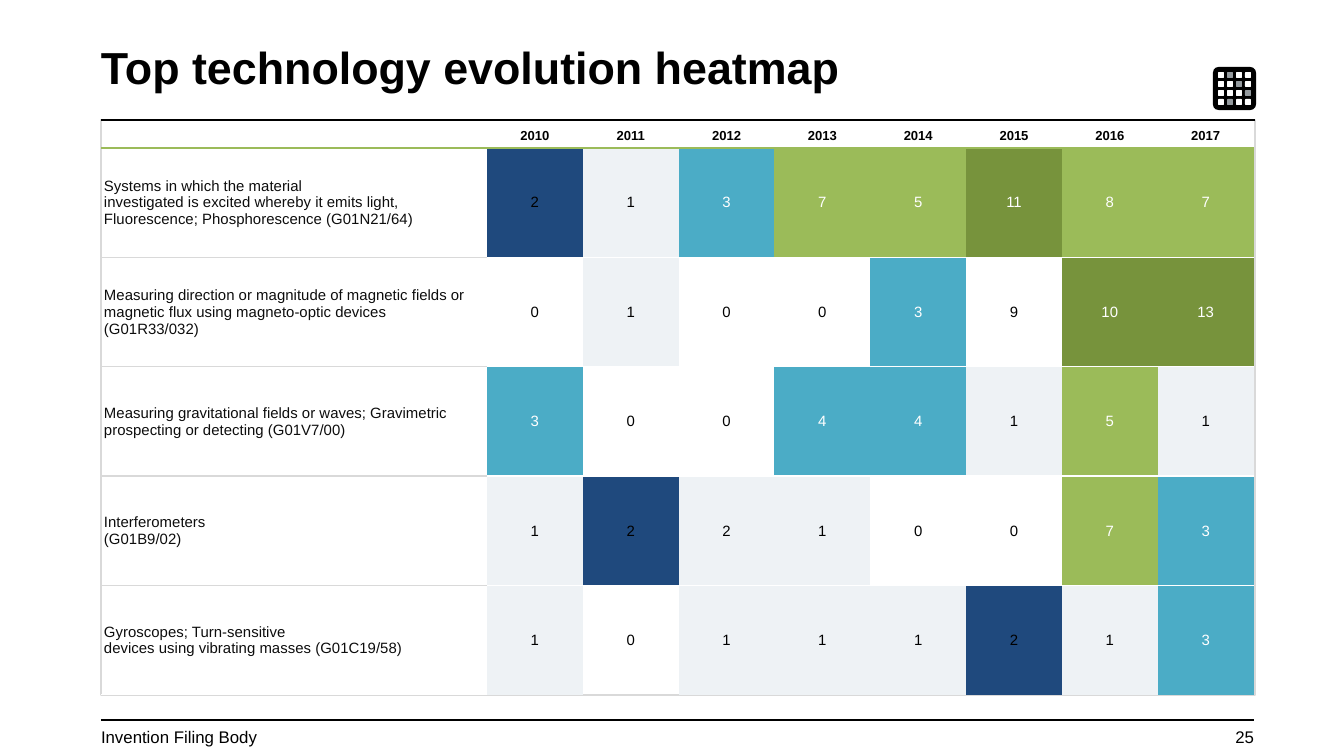
from dataclasses import dataclass

from lxml import etree
from pptx import Presentation
from pptx import util as u
from pptx.dml.color import RGBColor
from pptx.enum import shapes, text
from pptx.oxml.ns import qn

SCALE = 9144000 / 1344
LEFT, RIGHT = 101, 1254
BLACK, WHITE, GREY, GREEN = "000000", "FFFFFF", "D9D9D9", "9BBB59"
NO_GRID = "{2D5ABB26-0587-4C30-8999-92F81FD0307C}"
ALIGN = {"l": text.PP_ALIGN.LEFT, "c": text.PP_ALIGN.CENTER, "r": text.PP_ALIGN.RIGHT}


@dataclass
class Level:
    fill: str | None
    ink: str


@dataclass
class Topic:
    label: str
    counts: list[int]
    heat: str


LEVELS = {
    "-": Level(None, BLACK),
    "L": Level("EEF2F5", BLACK),
    "N": Level("1F497D", BLACK),
    "B": Level("4BACC6", WHITE),
    "G": Level(GREEN, WHITE),
    "D": Level("77933C", WHITE),
}
YEARS = range(2010, 2018)
TOPICS = [
    Topic("Systems in which the material\ninvestigated is excited whereby it emits light, "
          "Fluorescence; Phosphorescence (G01N21/64)",
          [2, 1, 3, 7, 5, 11, 8, 7], "NLBGGDGG"),
    Topic("Measuring direction or magnitude of magnetic fields or magnetic flux "
          "using magneto-optic devices\n(G01R33/032)",
          [0, 1, 0, 0, 3, 9, 10, 13], "-L--B-DD"),
    Topic("Measuring gravitational fields or waves; Gravimetric prospecting "
          "or detecting (G01V7/00)",
          [3, 0, 0, 4, 4, 1, 5, 1], "B--BBLGL"),
    Topic("Interferometers\n(G01B9/02)",
          [1, 2, 2, 1, 0, 0, 7, 3], "LNLL--GB"),
    Topic("Gyroscopes; Turn-sensitive\ndevices using vibrating masses (G01C19/58)",
          [1, 0, 1, 1, 1, 2, 1, 3], "L-LLLNLB"),
]
ICON = [".#..", "..#.", "...#", ".#.."]


def px(n: int) -> int:
    return round(n * SCALE)


def hue(code: str) -> RGBColor:
    return RGBColor.from_string(code)


def write(frame, words: str, size=8, color=BLACK, bold=False, align="l") -> None:
    frame.word_wrap = True
    for i, line in enumerate(words.split("\n")):
        para = frame.paragraphs[0] if i == 0 else frame.add_paragraph()
        para.alignment = ALIGN[align]
        if not line:
            etree.SubElement(para._p, qn("a:endParaRPr"), sz=str(size * 100))
            continue
        run = para.add_run()
        run.text = line
        font = run.font
        font.name, font.size, font.bold = "Arial", u.Pt(size), bold
        font.color.rgb = hue(color)


def label(slide, words: str, x: int, y: int, w: int, h: int, mid=False, **style) -> None:
    frame = slide.shapes.add_textbox(px(x), px(y), px(w), px(h)).text_frame
    frame.margin_left = frame.margin_right = frame.margin_top = frame.margin_bottom = 0
    frame.vertical_anchor = text.MSO_ANCHOR.MIDDLE if mid else text.MSO_ANCHOR.TOP
    write(frame, words, **style)


def rule(slide, y: int, end: int, width: float) -> None:
    line = slide.shapes.add_connector(
        shapes.MSO_CONNECTOR.STRAIGHT, px(LEFT), px(y), px(end), px(y))
    line.line.color.rgb = hue(BLACK)
    line.line.width = u.Pt(width)
    etree.SubElement(line._element.spPr, qn("a:effectLst"))


def block(slide, x: int, y: int, w: int, h: int, fill=None, edge=None, curve=0.0) -> None:
    kind = shapes.MSO_SHAPE.ROUNDED_RECTANGLE if curve else shapes.MSO_SHAPE.RECTANGLE
    box = slide.shapes.add_shape(kind, px(x), px(y), px(w), px(h))
    box.shadow.inherit = False
    if curve:
        box.adjustments[0] = curve
    if fill:
        box.fill.solid()
        box.fill.fore_color.rgb = hue(fill)
    else:
        box.fill.background()
    if edge:
        box.line.color.rgb = hue(edge)
        box.line.width = u.Pt(0.75)
    else:
        box.line.fill.background()


def icon(slide) -> None:
    block(slide, 1213, 67, 43, 43, fill=BLACK, curve=0.13)
    for r, row in enumerate(ICON):
        for c, mark in enumerate(row):
            tone = "949A9E" if mark == "#" else WHITE
            block(slide, 1218 + 9 * c, 72 + 9 * r, 6, 6, fill=tone, curve=0.17)


def border(cell, side: str, color: str | None, width=0.75) -> None:
    line = etree.SubElement(cell._tc.get_or_add_tcPr(), qn(f"a:{side}"), w=str(u.Pt(width)))
    if color:
        solid = etree.SubElement(line, qn("a:solidFill"))
        etree.SubElement(solid, qn("a:srgbClr"), val=color)
    else:
        etree.SubElement(line, qn("a:noFill"))


def fill_cell(cell, words: str, top, bottom, fill=None, head=False, **style) -> None:
    cell.margin_left = cell.margin_right = px(3)
    cell.margin_top = 0
    cell.margin_bottom = px(3) if head else 0
    cell.vertical_anchor = text.MSO_ANCHOR.TOP if head else text.MSO_ANCHOR.MIDDLE
    write(cell.text_frame, words, **style)
    border(cell, "lnT", *top)
    border(cell, "lnB", *bottom)
    if fill:
        cell.fill.solid()
        cell.fill.fore_color.rgb = hue(fill)
    else:
        cell.fill.background()


def heatmap(slide) -> None:
    first, head, body = 386, 19, 547
    count = len(TOPICS)
    grid = slide.shapes.add_table(
        count + 1, len(YEARS) + 1, px(LEFT), px(129), px(RIGHT - LEFT), px(head + body)).table
    grid._tbl.tblPr.find(qn("a:tableStyleId")).text = NO_GRID
    grid.first_row = grid.horz_banding = False
    for i, col in enumerate(grid.columns):
        col.width = px(RIGHT - LEFT - first) // len(YEARS) if i else px(first)
    for i, row in enumerate(grid.rows):
        row.height = px(body) // count if i else px(head)

    green = (GREEN, 1)
    for c, name in enumerate(["", *YEARS]):
        fill_cell(grid.cell(0, c), str(name), (None,), green,
                  head=True, size=7, bold=True, align="c")
    for r, topic in enumerate(TOPICS, 1):
        last = r == count
        fill_cell(grid.cell(r, 0), topic.label, green if r == 1 else (GREY,),
                  (WHITE, 0.5) if last else (GREY,), color="0D0D0D")
        for c, (num, key) in enumerate(zip(topic.counts, topic.heat), 1):
            level = LEVELS[key]
            fill_cell(grid.cell(r, c), str(num), green if r == 1 else (WHITE,),
                      (None,) if last else (WHITE,), fill=level.fill,
                      color=level.ink, align="c")


def main() -> None:
    deck = Presentation()
    deck.slide_width, deck.slide_height = px(1344), px(756)
    slide = deck.slides.add_slide(deck.slide_layouts[6])
    rule(slide, 720, RIGHT, 0.75)
    label(slide, "Invention Filing Body", LEFT, 727, 228, 26, size=9)
    label(slide, "Top technology evolution heatmap", LEFT, 37, 1153, 59,
          mid=True, size=24, bold=True)
    label(slide, "25", 1169, 727, 85, 26, size=9, align="r")
    icon(slide)
    block(slide, LEFT, 120, 1154, 575, edge=GREY)
    heatmap(slide)
    rule(slide, 120, 1255, 1)
    deck.save("out.pptx")


if __name__ == "__main__":
    main()
